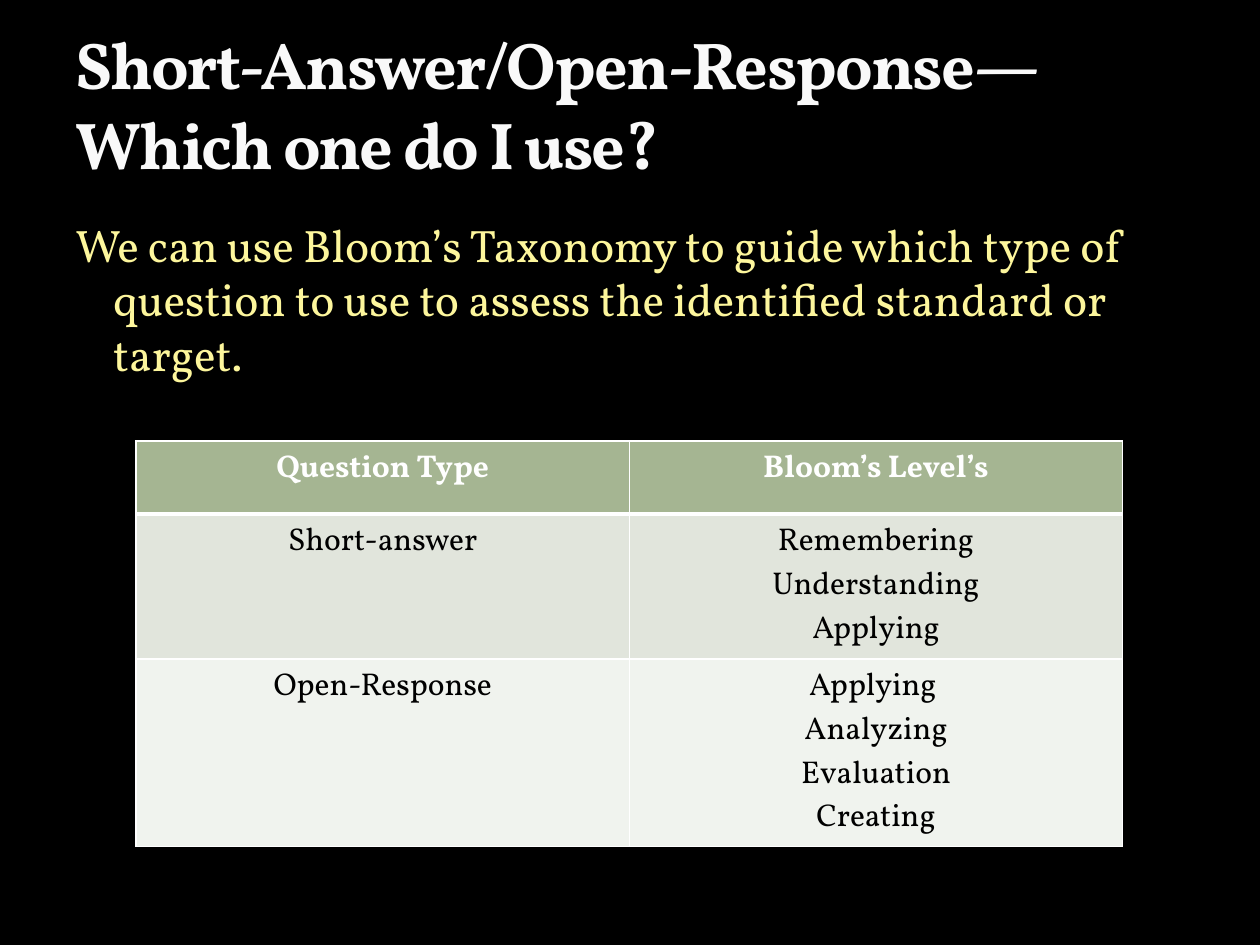
from lxml.etree import SubElement
from pptx import Presentation
from pptx.dml.color import RGBColor
from pptx.enum.text import MSO_ANCHOR, MSO_AUTO_SIZE, PP_ALIGN
from pptx.oxml import parse_xml
from pptx.oxml.ns import nsdecls, qn
from pptx.util import Inches, Pt


def color(code):
    return RGBColor.from_string(code)


def line(tag, code, width, alpha=100):
    """Return a solid DrawingML line with its width in points."""
    ln = parse_xml(f'<a:{tag} {nsdecls("a")} w="{int(width * 12700)}"/>')
    fill = SubElement(ln, qn("a:solidFill"))
    tone = SubElement(fill, qn("a:srgbClr"), val=code)
    if alpha < 100:
        SubElement(tone, qn("a:alpha"), val=str(alpha * 1000))
    return ln


class Deck:
    font = "Vollkorn"
    white = "FFFFFF"
    fills = ["A5B592", "E1E5DC", "F0F3EE"]

    def __init__(self, prs):
        self.slide = prs.slides.add_slide(prs.slide_layouts[5])
        back = self.slide.background.fill
        back.solid()
        back.fore_color.rgb = color("000000")

    def run(self, para, text, size, code, bold=False):
        run = para.add_run()
        run.text = text
        font = run.font
        font.name, font.size, font.bold = self.font, Pt(size), bold
        font.color.rgb = color(code)
        return run

    def title(self, text, left, top, width, height):
        shape = self.slide.shapes.title
        shape.left, shape.top = Inches(left), Inches(top)
        shape.width, shape.height = Inches(width), Inches(height)
        frame = shape.text_frame
        frame.auto_size = MSO_AUTO_SIZE.NONE
        frame.vertical_anchor = MSO_ANCHOR.BOTTOM
        para = frame.paragraphs[0]
        para.alignment = PP_ALIGN.LEFT
        run = self.run(para, text, 37.8, "F9F9F9", True)
        # Tight tracking and a faint outline
        props = run.font._element
        props.set("spc", "-100")
        props.insert(0, line("ln", "3C4422", 0.25, 25))

    def body(self, text, left, top, width, height):
        box = self.slide.shapes.add_textbox(
            Inches(left), Inches(top), Inches(width), Inches(height))
        frame = box.text_frame
        frame.word_wrap = True
        para = frame.paragraphs[0]
        para.space_before = Pt(6)
        # Hanging indent
        props = para._p.get_or_add_pPr()
        props.set("marL", str(Inches(0.3)))
        props.set("indent", str(Inches(-0.3)))
        self.run(para, text, 26, "FDF69C")

    def cell(self, cell, lines, row):
        cell.fill.solid()
        cell.fill.fore_color.rgb = color(self.fills[row])
        head = row == 0
        frame = cell.text_frame
        for i, text in enumerate(lines):
            para = frame.add_paragraph() if i else frame.paragraphs[0]
            para.alignment = PP_ALIGN.CENTER
            self.run(para, text, 18, self.white if head else "000000", head)
        # White borders, heavy under the header
        widths = {"lnL": 1, "lnR": 1,
                  "lnT": 3 if row == 1 else 1, "lnB": 3 if head else 1}
        props = cell._tc.get_or_add_tcPr()
        for i, (tag, width) in enumerate(widths.items()):
            props.insert(i, line(tag, self.white, width))

    def table(self, rows, heights, left, top, width):
        count = len(rows[0])
        table = self.slide.shapes.add_table(
            len(rows), count, Inches(left), Inches(top),
            Inches(width), Inches(sum(heights))).table
        for col in table.columns:
            col.width = Inches(width / count)
        for r, (row, height) in enumerate(zip(rows, heights)):
            table.rows[r].height = Inches(height)
            for c, lines in enumerate(row):
                self.cell(table.cell(r, c), lines, r)


def main():
    prs = Presentation()
    prs.slide_width, prs.slide_height = Inches(10), Inches(7.5)
    deck = Deck(prs)

    # Heading and lead sentence
    deck.title("Short-Answer/Open-Response—Which one do I use?",
               0.5, 0.17, 9, 1.33)
    deck.body("We can use Bloom’s Taxonomy to guide which type of question "
              "to use to assess the identified standard or target.",
              0.5, 1.67, 9, 1.6)

    # Question types and their levels
    rows = [
        (["Question Type"], ["Bloom’s Level’s"]),
        (["Short-answer"], ["Remembering", "Understanding", "Applying"]),
        (["Open-Response"],
         ["Applying ", "Analyzing", "Evaluation", "Creating"]),
    ]
    deck.table(rows, [0.58, 1.15, 1.49], 1.08, 3.5, 7.83)
    prs.save("out.pptx")


if __name__ == "__main__":
    main()
